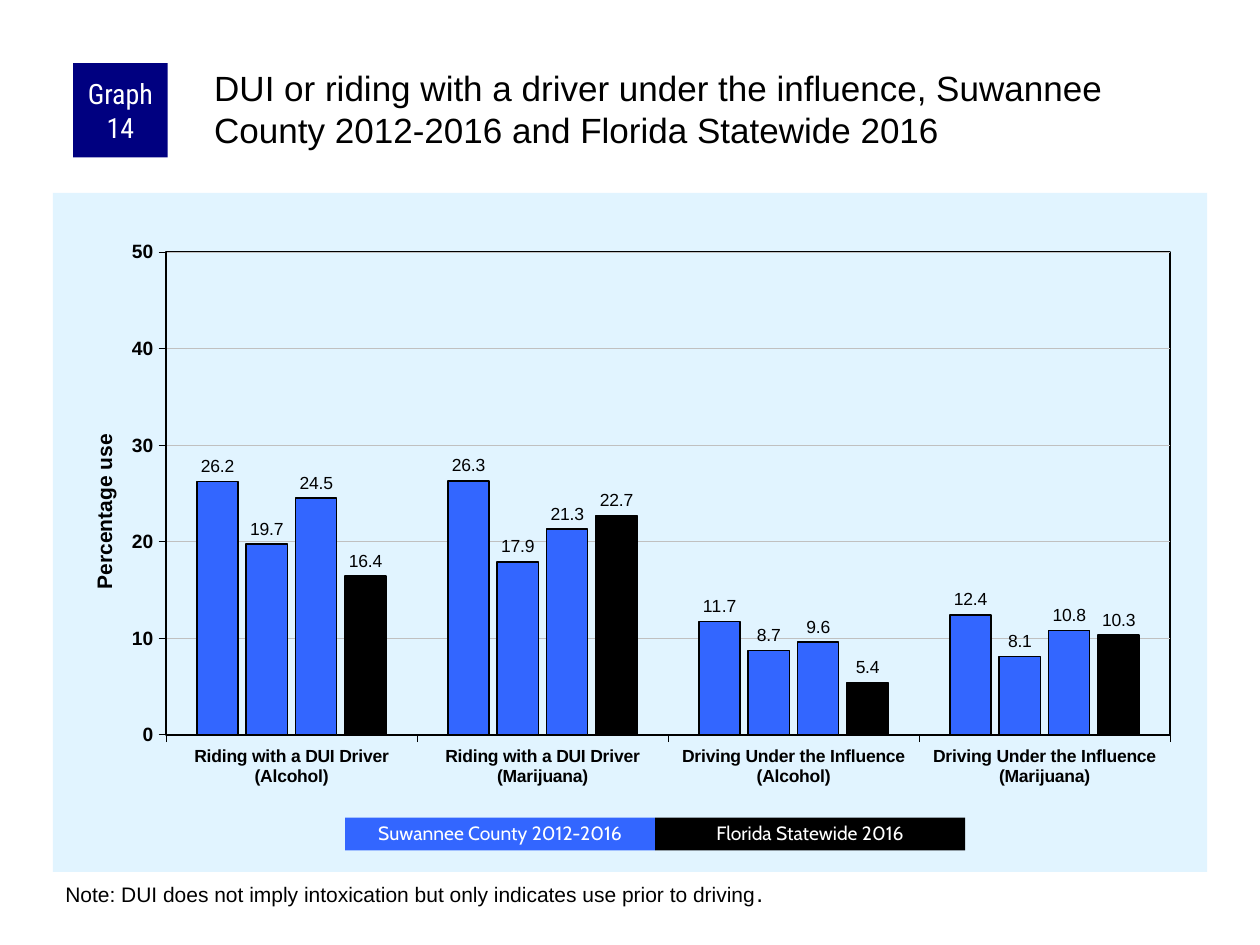
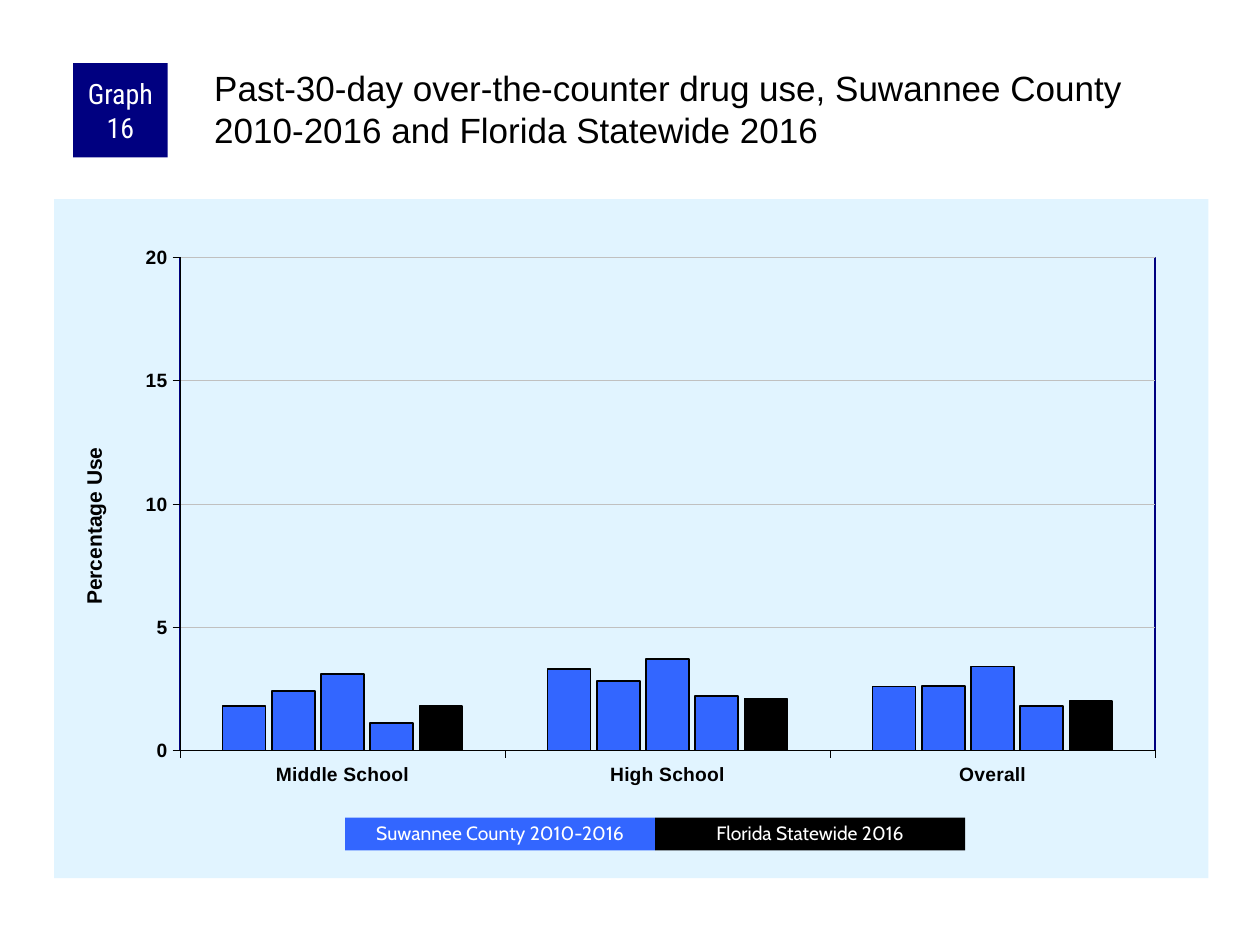
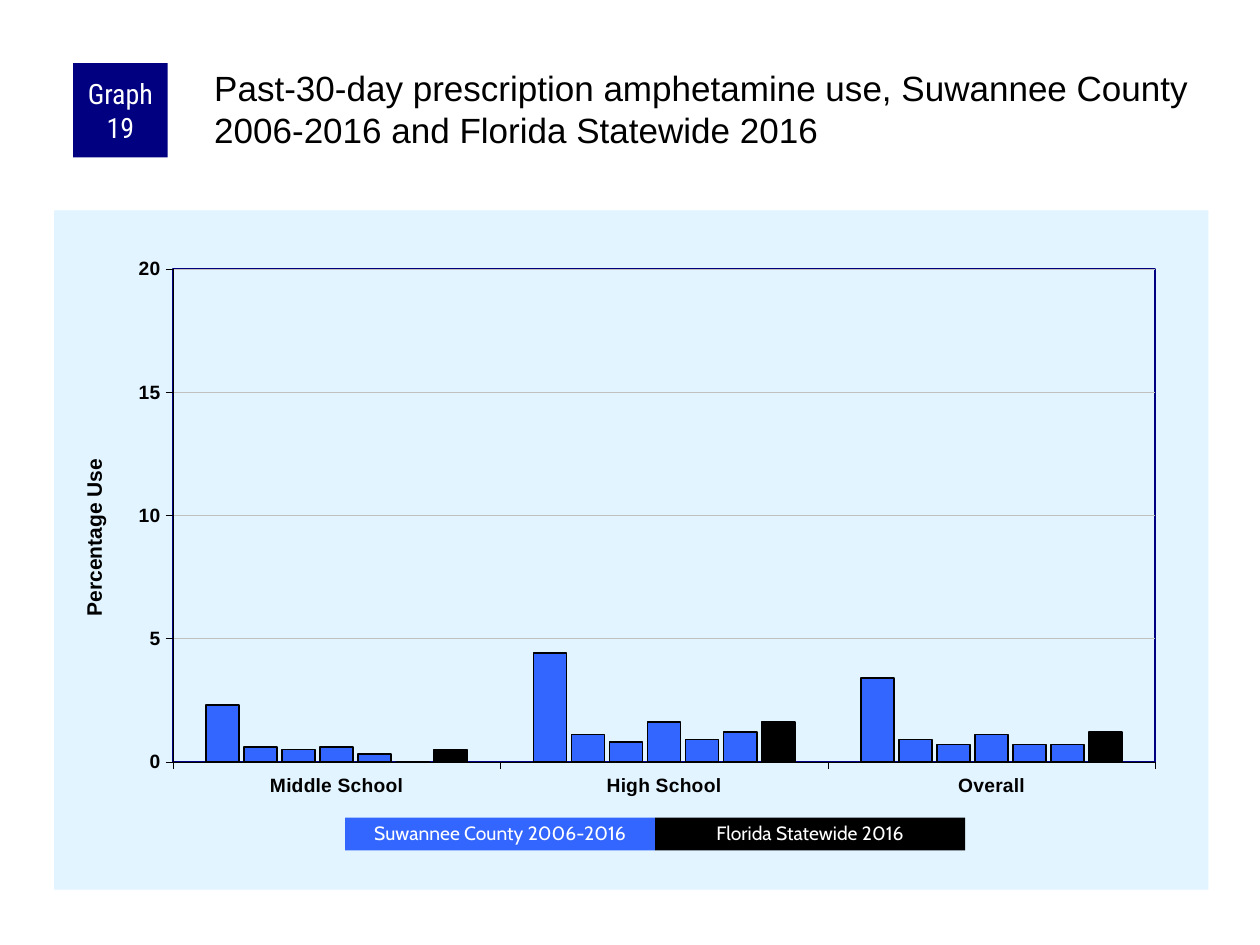
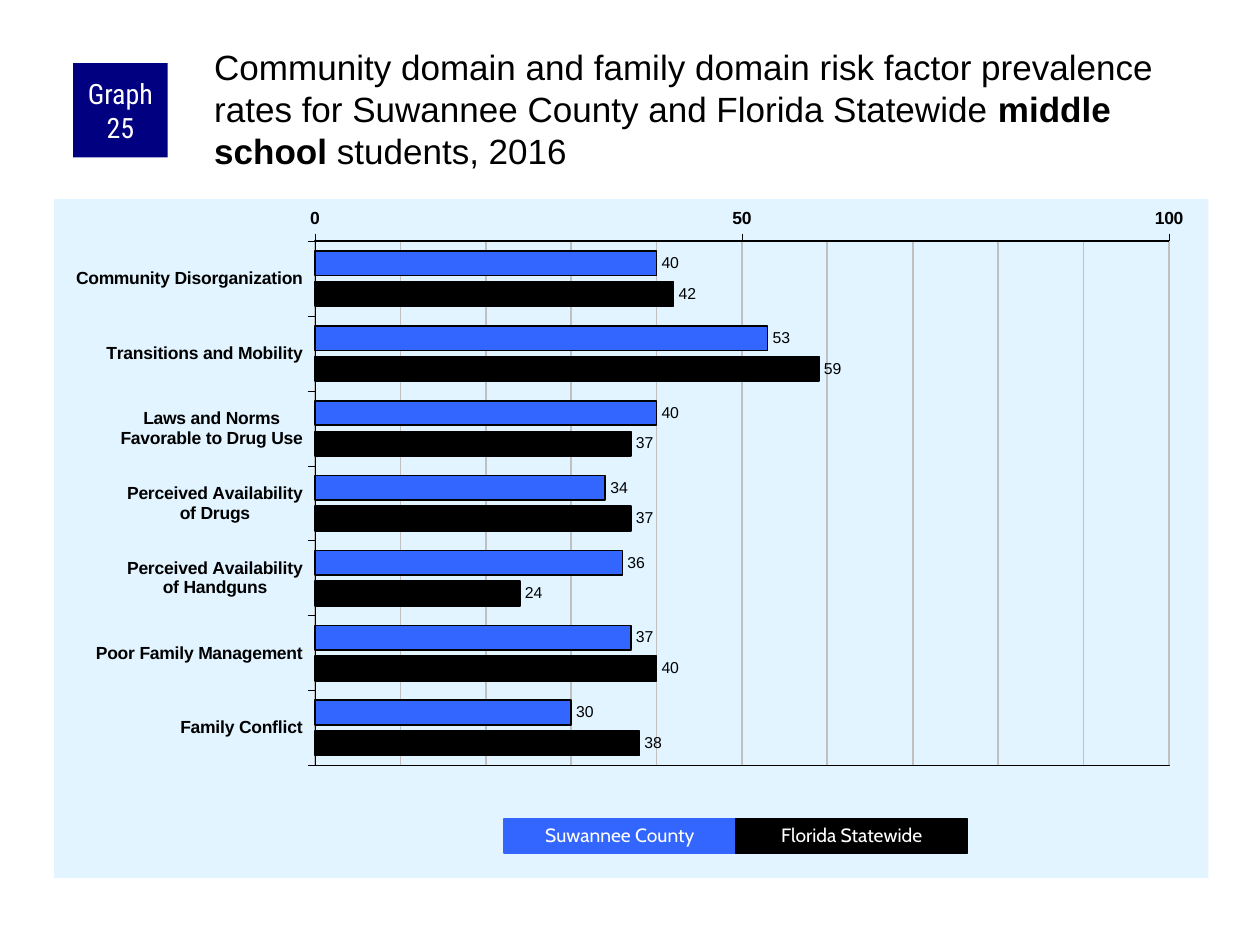
from pptx import Presentation
from pptx.chart.data import CategoryChartData
from pptx.dml.color import RGBColor
from pptx.enum.chart import XL_AXIS_CROSSES, XL_CHART_TYPE, XL_LABEL_POSITION, XL_TICK_MARK
from pptx.enum.shapes import MSO_SHAPE
from pptx.enum.text import MSO_ANCHOR, PP_ALIGN
from pptx.oxml import parse_xml
from pptx.oxml.ns import nsdecls, qn
from pptx.util import Inches, Pt

HUES = {
    "black": "000000",
    "white": "FFFFFF",
    "navy": "000080",
    "blue": "3366FF",
    "pale": "E1F4FF",
    "grid": "C0C0C0",
}
SCHOOLS = ["Middle School", "High School", "Overall"]


def place(parent, **spots):
    modes = "".join(f'<c:{key}Mode val="edge"/>' for key in ("x", "y"))
    inner = '<c:layoutTarget val="inner"/>' if "w" in spots else ""
    values = "".join(f'<c:{key} val="{spot}"/>' for key, spot in spots.items())
    layout = parse_xml(
        f'<c:layout {nsdecls("c")}><c:manualLayout>{inner}{modes}{values}'
        "</c:manualLayout></c:layout>"
    )
    old = parent.find(qn("c:layout"))
    if old is None:
        parent.insert(0, layout)
    else:
        parent.replace(old, layout)


def paint(hue):
    return f'<a:solidFill><a:srgbClr val="{HUES[hue]}"/></a:solidFill>'


def rule(hue, width):
    return f'<a:ln w="{Pt(width)}">{paint(hue)}</a:ln>'


def frame(body, line):
    return parse_xml(f'<c:spPr {nsdecls("c", "a")}>{body}{line}</c:spPr>')


class Deck:
    def __init__(self):
        self.show = Presentation()
        self.show.slide_width = Inches(10)
        self.show.slide_height = Inches(7.5)
        self.slide = None

    def hue(self, name):
        return RGBColor.from_string(HUES[name])

    def style(self, font, size, name="Arial", hue="black", bold=False):
        font.name, font.size, font.bold = name, Pt(size), bold
        font.color.rgb = self.hue(hue)

    def stroke(self, line, hue, width):
        line.color.rgb = self.hue(hue)
        line.width = Pt(width)

    def box(self, spot, text, fill, size, name, pad=0.1, gap=1.0, edge=False):
        shape = self.slide.shapes.add_shape(MSO_SHAPE.RECTANGLE, *map(Inches, spot))
        shape.shadow.inherit = False
        shape.fill.solid()
        shape.fill.fore_color.rgb = self.hue(fill)
        if edge:
            self.stroke(shape.line, fill, 0.75)
        else:
            shape.line.fill.background()
        text_frame = shape.text_frame
        text_frame.text = text
        text_frame.word_wrap = True
        text_frame.vertical_anchor = MSO_ANCHOR.MIDDLE
        text_frame.margin_left = text_frame.margin_right = Inches(pad)
        text_frame.margin_top = text_frame.margin_bottom = 0
        line = text_frame.paragraphs[0]
        line.alignment = PP_ALIGN.CENTER
        line.line_spacing = gap
        self.style(line.runs[0].font, size, name, "white")

    def text(self, spot, parts, pads):
        box = self.slide.shapes.add_textbox(*map(Inches, spot))
        text_frame = box.text_frame
        text_frame.word_wrap = True
        text_frame.margin_left, text_frame.margin_top = map(Inches, pads[:2])
        text_frame.margin_right, text_frame.margin_bottom = map(Inches, pads[2:])
        for text, size, bold in parts:
            run = text_frame.paragraphs[0].add_run()
            run.text = text
            self.style(run.font, size, bold=bold)

    def start(self, number, parts, top=0.5):
        self.slide = self.show.slides.add_slide(self.show.slide_layouts[6])
        self.box((0.58, 0.5, 0.75, 0.75), f"Graph {number}", "navy", 16,
                 "Roboto Condensed", pad=0.05)
        runs = [(text, 20, index % 2 == 1) for index, text in enumerate(parts)]
        self.text((1.67, top, 7.92, 0.83), runs, (0.03, 0.03, 0, 0))

    def key(self, names, left=2.74, top=6.49, width=2.46, height=0.26, edge=False):
        for index, (name, fill) in enumerate(zip(names, ("blue", "black"))):
            self.box((left + index * width, top, width, height), name, fill, 11,
                     "Cabin", gap=0.9, edge=edge)

    def axis(self, axis, size):
        axis.major_tick_mark = XL_TICK_MARK.OUTSIDE
        axis.minor_tick_mark = XL_TICK_MARK.NONE
        self.style(axis.tick_labels.font, size, bold=True)
        self.stroke(axis.format.line, "black", 0.25)

    def chart(self, spot, kind, names, rows, plot, top, step, gap, lap,
              sizes=(11, 11), border="black", thin=None):
        data = CategoryChartData()
        data.categories = names
        for index, row in enumerate(rows, 1):
            data.add_series(f"Series {index}", row)
        chart = self.slide.shapes.add_chart(kind, *map(Inches, spot), data).chart
        chart.has_legend = chart.has_title = False
        self.style(chart.font, 10)
        bars = chart.plots[0]
        bars.vary_by_categories = False
        bars.gap_width, bars.overlap = gap, lap
        for index, series in enumerate(bars.series):
            last = index == len(rows) - 1
            series.format.fill.solid()
            series.format.fill.fore_color.rgb = self.hue("black" if last else "blue")
            series.invert_if_negative = False
            self.stroke(series.format.line, "black", 0.75 if index == thin else 1)
        self.axis(chart.category_axis, sizes[0])
        scale = chart.value_axis
        self.axis(scale, sizes[1])
        scale.minimum_scale, scale.maximum_scale, scale.major_unit = 0, top, step
        scale.has_major_gridlines = True
        self.stroke(scale.major_gridlines.format.line, "grid", 0.25)
        root = chart._chartSpace
        root.chart.addnext(frame(paint("pale"), "<a:ln><a:noFill/></a:ln>"))
        area = root.chart.plotArea
        place(area, **dict(zip("xywh", plot)))
        area.append(frame("<a:noFill/>", rule(border, 1)))
        return chart

    def title(self, chart, text, left, top):
        title = chart.value_axis.axis_title
        title.text_frame.text = text
        self.style(title.text_frame.paragraphs[0].runs[0].font, 12, bold=True)
        place(title._element, x=left, y=top)

    def labels(self, chart, size, form):
        plot = chart.plots[0]
        plot.has_data_labels = True
        labels = plot.data_labels
        labels.show_value = True
        labels.number_format = form
        labels.number_format_is_linked = False
        labels.position = XL_LABEL_POSITION.OUTSIDE_END
        self.style(labels.font, size)

    def driving(self):
        self.start(14, ["DUI or riding with a driver under the influence, Suwannee "
                        "County 2012-2016 and Florida Statewide 2016"])
        chart = self.chart(
            (0.42, 1.53, 9.16, 5.39), XL_CHART_TYPE.COLUMN_CLUSTERED,
            [f"{act} ({drug})"
             for act in ("Riding with a DUI Driver", "Driving Under the Influence")
             for drug in ("Alcohol", "Marijuana")],
            [(26.2, 26.3, 11.7, 12.4), (19.7, 17.9, 8.7, 8.1),
             (24.5, 21.3, 9.6, 10.8), (16.4, 22.7, 5.4, 10.3)],
            (0.098, 0.087, 0.87, 0.711), 50, 10, 150, -20, sizes=(10, 11), thin=2)
        self.title(chart, "Percentage use", 0.03, 0.35)
        self.labels(chart, 10, "0.0")
        self.text((0.42, 6.92, 9.17, 0.34),
                  [("Note: DUI does not imply intoxication but only indicates use "
                    "prior to driving", 12, False), (".", 14, False)],
                  (0.1, 0.05, 0.1, 0.05))
        self.key(["Suwannee County 2012-2016", "Florida Statewide 2016"])

    def drug(self, number, name, year, top, rows, plot, thin=None):
        self.start(number, [f"Past-30-day {name} use, Suwannee County {year}-2016 "
                            "and Florida Statewide 2016"])
        chart = self.chart((0.43, top, 9.16, 5.39), XL_CHART_TYPE.COLUMN_CLUSTERED,
                           SCHOOLS, rows, plot, 20, 5, 200, -15,
                           border="navy", thin=thin)
        self.title(chart, "Percentage Use", 0.02, 0.36)
        self.key([f"Suwannee County {year}-2016", "Florida Statewide 2016"])

    def risk(self):
        self.start(25, ["Community domain and family domain risk factor prevalence "
                        "rates for Suwannee County and Florida Statewide ",
                        "middle school", " students, 2016"], top=0.33)
        chart = self.chart(
            (0.43, 1.58, 9.16, 5.39), XL_CHART_TYPE.BAR_CLUSTERED,
            ["Community Disorganization", "Transitions and Mobility",
             "Laws and Norms\nFavorable to Drug Use",
             "Perceived Availability\nof Drugs", "Perceived Availability\nof Handguns",
             "Poor Family Management", "Family Conflict"],
            [(40, 53, 40, 34, 36, 37, 30), (42, 59, 37, 37, 24, 40, 38)],
            (0.226, 0.062, 0.74, 0.772), 100, 50, 80, -25, sizes=(10, 10))
        chart.category_axis.reverse_order = True
        chart.category_axis.crosses = XL_AXIS_CROSSES.MAXIMUM
        scale = chart.value_axis
        scale.minor_unit = 10
        scale.has_minor_gridlines = True
        self.stroke(scale.major_gridlines.format.line, "grid", 1)
        minor = scale._element.find(qn("c:minorGridlines"))
        minor.append(frame("", rule("grid", 1)))
        self.labels(chart, 9, "0")
        self.key(["Suwannee County", "Florida Statewide"], left=4, top=6.5,
                 width=1.84, height=0.27, edge=True)


def main():
    deck = Deck()
    deck.driving()
    deck.drug(16, "over-the-counter drug", 2010, 1.58,
              [(1.8, 3.3, 2.6), (2.4, 2.8, 2.6), (3.1, 3.7, 3.4),
               (1.1, 2.2, 1.8), (1.8, 2.1, 2)],
              (0.109, 0.086, 0.845, 0.726), thin=0)
    deck.drug(19, "prescription amphetamine", 2006, 1.67,
              [(2.3, 4.4, 3.4), (0.6, 1.1, 0.9), (0.5, 0.8, 0.7), (0.6, 1.6, 1.1),
               (0.3, 0.9, 0.7), (0, 1.2, 0.7), (0.5, 1.6, 1.2)],
              (0.103, 0.086, 0.851, 0.726))
    deck.risk()
    deck.show.save("out.pptx")


if __name__ == "__main__":
    main()
